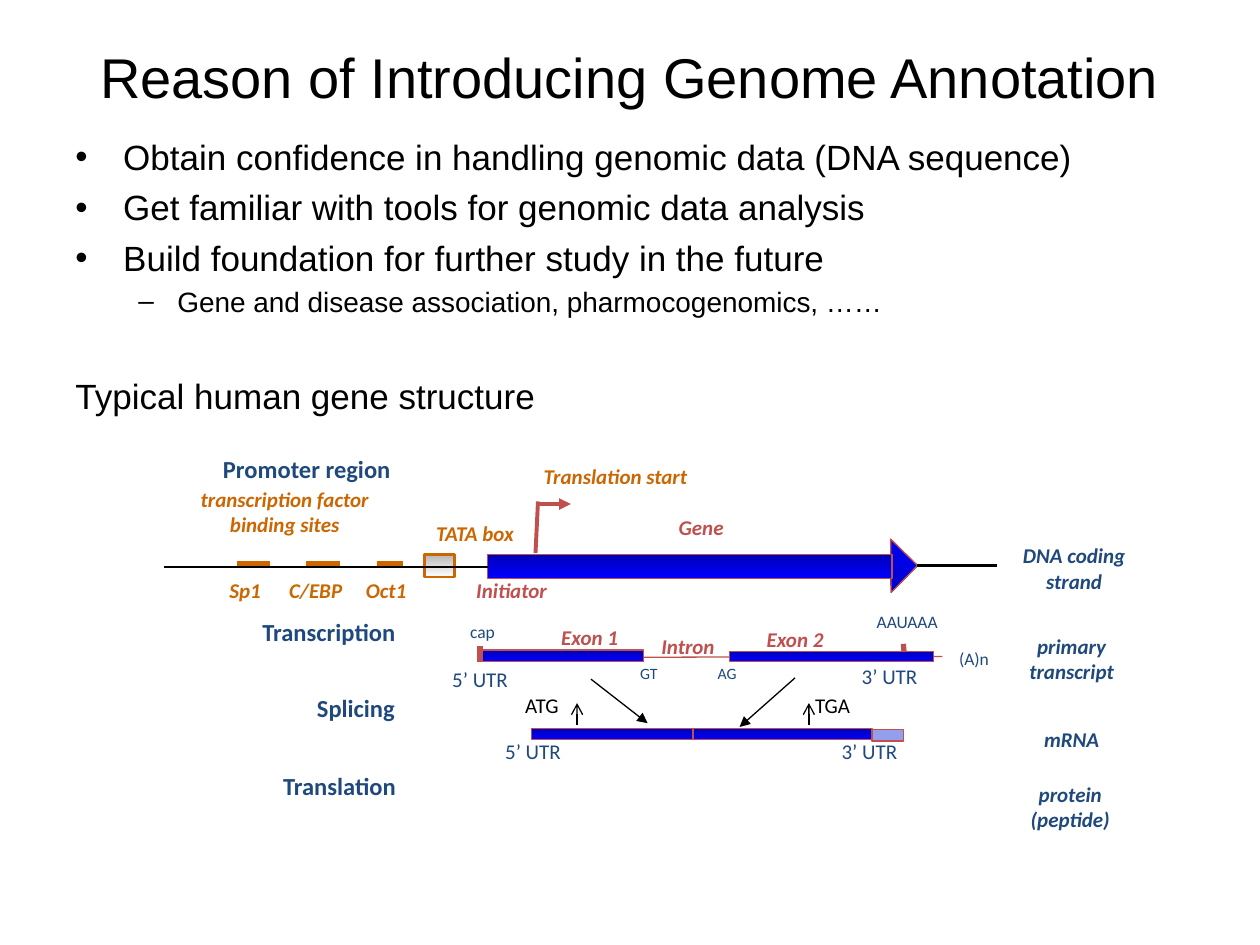
"""Build the genome annotation slide with its gene structure diagram."""
from lxml import etree
from pptx import Presentation
from pptx.dml.color import RGBColor
from pptx.enum import shapes, text
from pptx.oxml import ns
from pptx.util import Emu, Pt

PX = 9144
ORANGE, RED, NAVY, BLACK = "CC6600", "C0504D", "1F497D", "000000"
BLUES, GREYS = ("0000B6", "0000FF"), ("B6B6B6", "FFFFFF")
CENTER, LEFT = text.PP_ALIGN.CENTER, text.PP_ALIGN.LEFT


def px(*lengths):
    return [Emu(length * PX) for length in lengths]


def color(value):
    return RGBColor.from_string(value)


def add_xml(parent, tag, **attributes):
    return etree.SubElement(parent, ns.qn(tag), attributes)


class Slide:
    def __init__(self, deck):
        self.page = deck.slides.add_slide(deck.slide_layouts[5])

    def style(self, para, size, ink, font, bold=False, italic=False):
        for span in para.runs:
            span.font.size, span.font.name = Pt(size), font
            span.font.color.rgb = color(ink)
            span.font.bold, span.font.italic = bold, italic

    def title(self, words, place):
        box = self.page.shapes.title
        box.left, box.top, box.width, box.height = px(*place)
        frame = box.text_frame
        frame.text = words
        frame.vertical_anchor = text.MSO_ANCHOR.MIDDLE
        frame.auto_size = text.MSO_AUTO_SIZE.NONE
        frame.paragraphs[0].alignment = CENTER
        self.style(frame.paragraphs[0], 32, BLACK, "Arial")

    def body(self, items, place):
        frame = self.page.shapes.add_textbox(*px(*place)).text_frame
        frame.word_wrap = True
        frame.text = "\n".join(item[0] for item in items)
        for para, (_, size, gap, margin, hang, bullet) in zip(frame.paragraphs, items):
            self.style(para, size, BLACK, "Arial")
            para.space_before = Pt(gap)
            props = para._p.get_or_add_pPr()
            props.set("marL", str(margin * PX))
            props.set("indent", str(-hang * PX))
            if bullet:
                add_xml(props, "a:buFont", typeface="Arial")
                add_xml(props, "a:buChar", char=bullet)

    def label(self, words, place, size, ink, bold=False, italic=False, align=CENTER):
        frame = self.page.shapes.add_textbox(*px(*place)).text_frame
        frame.word_wrap = True
        frame.vertical_anchor = text.MSO_ANCHOR.MIDDLE
        frame.text = words
        for para in frame.paragraphs:
            para.alignment = align
            self.style(para, size, ink, "Calibri", bold, italic)

    def block(self, place, fill, line=RED, width=0.75, kind="RECTANGLE", turn=0):
        box = self.page.shapes.add_shape(shapes.MSO_SHAPE[kind], *px(*place))
        box.shadow.inherit = False
        box.rotation = turn
        box.line.color.rgb, box.line.width = color(line), Pt(width)
        if isinstance(fill, str):
            box.fill.solid()
            box.fill.fore_color.rgb = color(fill)
            return
        box.fill.gradient()
        box.fill.gradient_angle = 270
        for stop, value in zip(box.fill.gradient_stops, fill):
            stop.color.rgb = color(value)

    def line(self, ends, ink, width, arrow=None):
        link = self.page.shapes.add_connector(shapes.MSO_CONNECTOR.STRAIGHT, *px(*ends))
        link.line.color.rgb, link.line.width = color(ink), Pt(width)
        if arrow:
            add_xml(link.line._get_or_add_ln(), "a:tailEnd", type=arrow)
        add_xml(link._element.spPr, "a:effectLst")


def draw_dna(slide):
    for left, right in ((188, 214), (243, 270), (299, 320)):
        slide.line((left, 447, right, 447), ORANGE, 3)
    slide.block((337, 440, 24, 18), GREYS, ORANGE, 1.5)
    slide.block((692, 434, 30, 30), BLUES, kind="RIGHT_TRIANGLE", turn=224.5)
    slide.block((387, 440, 321, 19), BLUES)
    slide.line((130, 450, 387, 450), BLACK, 1.5)
    slide.line((728, 449, 791, 449), BLACK, 1.5)
    slide.line((425, 439, 427, 398), RED, 2.25)
    slide.line((427, 400, 453, 400), RED, 2.25, "triangle")


def draw_transcript(slide):
    slide.line((717, 511, 718, 524), RED, 3)
    slide.line((381, 513, 381, 525), RED, 3)
    slide.line((384, 522, 748, 521), RED, 0.75)
    slide.block((579, 517, 162, 8), BLUES)
    slide.block((383, 516, 128, 9), BLUES)


def draw_mrna(slide):
    slide.block((692, 579, 25, 9), "949EEC")
    slide.block((422, 578, 128, 9), BLUES)
    slide.block((550, 578, 142, 9), BLUES)
    slide.line((469, 539, 514, 574), BLACK, 0.75, "triangle")
    slide.line((631, 538, 587, 577), BLACK, 0.75, "triangle")
    for x in (458, 642):
        slide.line((x, 575, x, 558), BLACK, 0.75, "arrow")


def add_labels(slide):
    for words, place in (
        ("Promoter region", (157, 355, 173, 34)),
        ("Transcription", (185, 485, 152, 33)),
        ("Splicing", (230, 545, 105, 33)),
        ("Translation", (206, 607, 127, 33)),
    ):
        slide.label(words, place, 14, NAVY, bold=True)

    for ink, words, place in (
        (ORANGE, "transcription factor\nbinding sites", (144, 381, 164, 50)),
        (ORANGE, "Sp1", (169, 453, 51, 30)),
        (ORANGE, "C/EBP", (215, 453, 71, 30)),
        (ORANGE, "Oct1", (278, 453, 57, 30)),
        (ORANGE, "TATA box", (316, 408, 122, 30)),
        (ORANGE, "Translation start", (401, 363, 175, 30)),
        (RED, "Initiator", (345, 453, 122, 30)),
        (RED, "Gene", (510, 403, 93, 30)),
        (RED, "Exon 1", (407, 491, 122, 30)),
        (RED, "Intron", (485, 498, 122, 30)),
        (RED, "Exon 2", (570, 492, 122, 30)),
        (NAVY, "DNA coding strand", (789, 426, 127, 50)),
        (NAVY, "primary transcript", (787, 498, 127, 50)),
        (NAVY, "mRNA", (787, 572, 127, 30)),
        (NAVY, "protein\n(peptide)", (786, 615, 127, 50)),
    ):
        slide.label(words, place, 12, ink, bold=True, italic=True)

    for words, size, place in (
        ("5’ UTR", 12, (345, 524, 72, 30)),
        ("3’ UTR", 12, (670, 522, 72, 30)),
        ("5’ UTR", 12, (387, 581, 72, 30)),
        ("3’ UTR", 12, (654, 581, 72, 30)),
        ("AAUAAA", 10, (682, 480, 76, 27)),
        ("(A)n", 10, (749, 509, 48, 27)),
        ("cap", 10, (362, 488, 42, 27)),
        ("GT", 9, (496, 522, 38, 25)),
        ("AG", 9, (558, 522, 38, 25)),
    ):
        slide.label(words, place, size, NAVY)

    for words, left in (("ATG", 407), ("TGA", 637)):
        slide.label(words, (left, 545, 55, 30), 12, BLACK, align=LEFT)


def main():
    deck = Presentation()
    deck.slide_width, deck.slide_height = px(1000, 750)
    slide = Slide(deck)
    slide.title("Reason of Introducing Genome Annotation", (50, 17, 900, 87))
    slide.body((
        ("Obtain confidence in handling genomic data (DNA sequence)", 20, 4.6, 38, 38, "•"),
        ("Get familiar with tools for genomic data analysis", 20, 4.6, 38, 38, "•"),
        ("Build foundation for further study in the future", 20, 4.6, 38, 38, "•"),
        ("Gene and disease association, pharmocogenomics, ……", 16, 3.7, 81, 31, "–"),
        ("Typical human gene structure", 20, 32, 38, 38, None),
    ), (50, 103, 900, 613))
    draw_dna(slide)
    draw_transcript(slide)
    draw_mrna(slide)
    add_labels(slide)
    deck.save("out.pptx")


if __name__ == "__main__":
    main()
